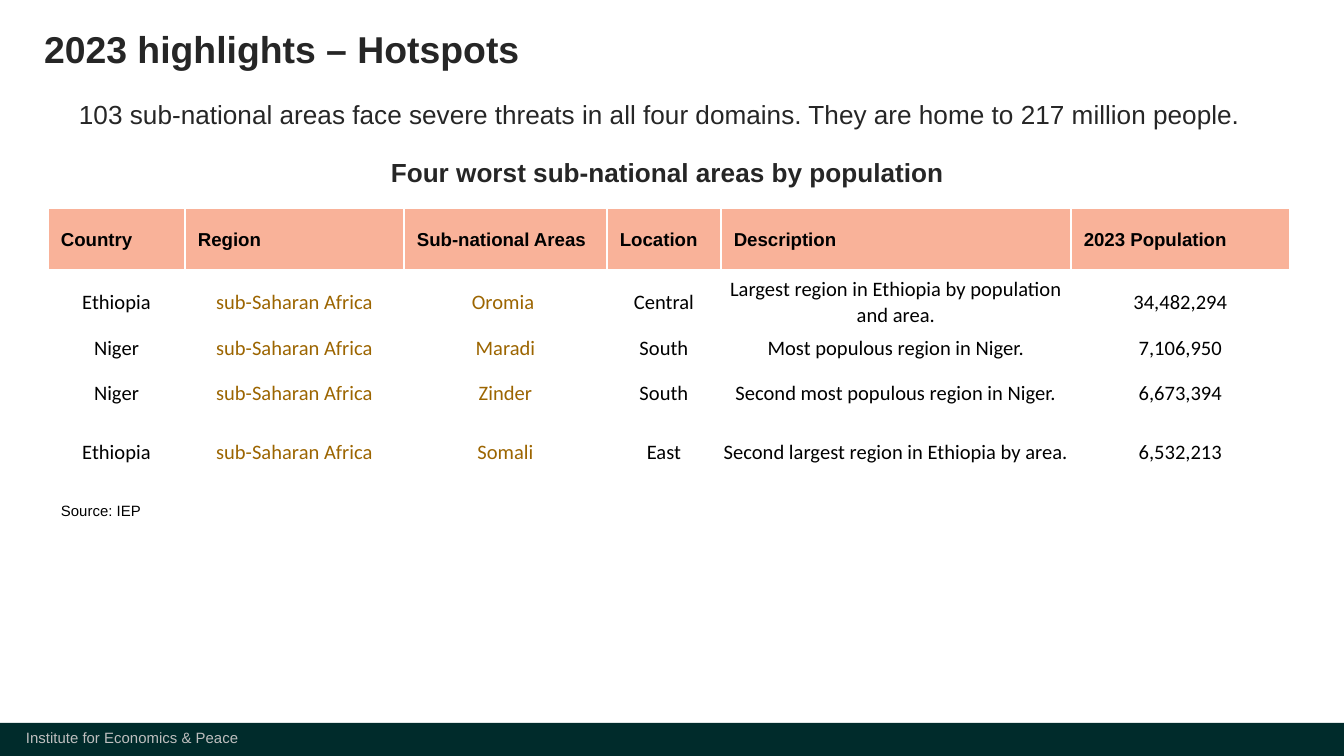
from dataclasses import dataclass

from lxml.etree import SubElement
from pptx import Presentation
from pptx.dml.color import RGBColor
from pptx.enum.shapes import MSO_SHAPE
from pptx.enum.text import MSO_ANCHOR, PP_ALIGN
from pptx.oxml.ns import qn
from pptx.slide import Slide
from pptx.table import _Cell
from pptx.text.text import TextFrame, _Paragraph
from pptx.util import Emu, Pt

EMU_PER_PX = 914400 / 134.4

BLACK = RGBColor(0x00, 0x00, 0x00)
WHITE = RGBColor(0xFF, 0xFF, 0xFF)
CHARCOAL = RGBColor(0x26, 0x26, 0x26)
SILVER = RGBColor(0xBF, 0xBF, 0xBF)
DARK_TEAL = RGBColor(0x00, 0x2B, 0x2B)
SALMON = RGBColor(0xF9, 0xB2, 0x99)
OCHRE = RGBColor(0x9C, 0x65, 0x00)


@dataclass(frozen=True)
class Box:
    left: int
    top: int
    width: int
    height: int


@dataclass(frozen=True)
class TextStyle:
    size: int
    color: RGBColor
    font: str = "Arial"
    bold: bool = False
    align: PP_ALIGN = PP_ALIGN.LEFT


@dataclass(frozen=True)
class Margins:
    left: int
    top: int
    right: int
    bottom: int


@dataclass(frozen=True)
class TextLine:
    text: str
    style: TextStyle
    space_before: int = 0


NO_MARGINS = Margins(0, 0, 0, 0)
BOX_MARGINS = Margins(13, 7, 13, 7)
HEADER_MARGINS = Margins(13, 11, 13, 11)
BODY_MARGINS = Margins(1, 1, 1, 0)
SOURCE_MARGINS = Margins(13, 11, 13, 0)

TITLE = TextStyle(20, CHARCOAL, bold=True)
STATEMENT = TextStyle(14, CHARCOAL)
TABLE_TITLE = TextStyle(14, CHARCOAL, bold=True, align=PP_ALIGN.CENTER)
FOOTER = TextStyle(8, SILVER)
HEADER = TextStyle(10, BLACK, bold=True)
BODY = TextStyle(11, BLACK, "Calibri", align=PP_ALIGN.CENTER)
ACCENT = TextStyle(11, OCHRE, "Calibri", align=PP_ALIGN.CENTER)
SOURCE = TextStyle(8, BLACK)

COLUMN_STYLES = (BODY, ACCENT, ACCENT, BODY, BODY, BODY)
COLUMN_WIDTHS = (137, 219, 203, 114, 350, 219)
ROW_HEIGHTS = (64, 60, 32, 59, 59, 47)
HEADINGS = ("Country", "Region", "Sub-national Areas", "Location", "Description", "2023 Population")
HOTSPOTS = (
    ("Ethiopia", "sub-Saharan Africa", "Oromia ", "Central",
     "Largest region in Ethiopia by population and area.", "34,482,294"),
    ("Niger", "sub-Saharan Africa", "Maradi", "South",
     "Most populous region in Niger.", "7,106,950"),
    ("Niger", "sub-Saharan Africa", "Zinder", "South",
     "Second most populous region in Niger.", "6,673,394"),
    ("Ethiopia", "sub-Saharan Africa", "Somali", "East",
     "Second largest region in Ethiopia by area.", "6,532,213"),
)


def px(length: int) -> Emu:
    return Emu(round(length * EMU_PER_PX))


def place(box: Box) -> tuple[Emu, Emu, Emu, Emu]:
    return px(box.left), px(box.top), px(box.width), px(box.height)


def set_margins(target: TextFrame | _Cell, margins: Margins) -> None:
    target.margin_left = px(margins.left)
    target.margin_top = px(margins.top)
    target.margin_right = px(margins.right)
    target.margin_bottom = px(margins.bottom)


def write(paragraph: _Paragraph, text: str, style: TextStyle) -> None:
    paragraph.text = text
    paragraph.alignment = style.align
    for run in paragraph.runs:
        run.font.size = Pt(style.size)
        run.font.name = style.font
        run.font.bold = style.bold
        run.font.color.rgb = style.color


def add_text(slide: Slide, box: Box, lines: list[TextLine],
             margins: Margins = NO_MARGINS, line_spacing: float = 0.9) -> None:
    text_frame = slide.shapes.add_textbox(*place(box)).text_frame
    text_frame.word_wrap = True
    set_margins(text_frame, margins)
    for index, line in enumerate(lines):
        paragraph = text_frame.add_paragraph() if index else text_frame.paragraphs[0]
        write(paragraph, line.text, line.style)
        paragraph.line_spacing = line_spacing
        if line.space_before:
            paragraph.space_before = Pt(line.space_before)


def add_white_borders(cell: _Cell, bottom_width: int) -> None:
    properties = cell._tc.get_or_add_tcPr()
    widths = {"a:lnL": 1, "a:lnR": 1, "a:lnT": 1, "a:lnB": bottom_width}
    for position, (side, width) in enumerate(widths.items()):
        line = SubElement(properties, qn(side), w=str(Pt(width)))
        fill = SubElement(line, qn("a:solidFill"))
        SubElement(fill, qn("a:srgbClr"), val=str(WHITE))
        properties.insert(position, line)


def fill_cell(cell: _Cell, text: str, style: TextStyle, margins: Margins,
              fill: RGBColor = WHITE, bottom_width: int = 1) -> None:
    cell.fill.solid()
    cell.fill.fore_color.rgb = fill
    cell.vertical_anchor = MSO_ANCHOR.MIDDLE
    set_margins(cell, margins)
    add_white_borders(cell, bottom_width)
    if text:
        write(cell.text_frame.paragraphs[0], text, style)


def add_hotspot_table(slide: Slide) -> None:
    box = Box(48, 208, sum(COLUMN_WIDTHS), sum(ROW_HEIGHTS))
    table = slide.shapes.add_table(len(ROW_HEIGHTS), len(COLUMN_WIDTHS), *place(box)).table
    table.horz_banding = False
    for column, width in zip(table.columns, COLUMN_WIDTHS):
        column.width = px(width)
    for row, height in zip(table.rows, ROW_HEIGHTS):
        row.height = px(height)

    source_row = len(ROW_HEIGHTS) - 1
    for column, (heading, style) in enumerate(zip(HEADINGS, COLUMN_STYLES)):
        fill_cell(table.cell(0, column), heading, HEADER, HEADER_MARGINS, SALMON, 3)
        for row, hotspot in enumerate(HOTSPOTS, start=1):
            fill_cell(table.cell(row, column), hotspot[column], style, BODY_MARGINS)
        if column:
            fill_cell(table.cell(source_row, column), "", SOURCE, BODY_MARGINS)
    fill_cell(table.cell(source_row, 0), "Source: IEP", SOURCE, SOURCE_MARGINS)


def add_footer(slide: Slide) -> None:
    bar = slide.shapes.add_shape(MSO_SHAPE.RECTANGLE, *place(Box(0, 723, 1344, 33)))
    bar.shadow.inherit = False
    bar.fill.solid()
    bar.fill.fore_color.rgb = DARK_TEAL
    bar.line.fill.background()
    add_text(slide, Box(13, 722, 242, 32), [TextLine("Institute for Economics & Peace", FOOTER)],
             BOX_MARGINS, 1.0)


def main() -> None:
    presentation = Presentation()
    presentation.slide_width = px(1344)
    presentation.slide_height = px(756)
    slide = presentation.slides.add_slide(presentation.slide_layouts[6])

    add_footer(slide)
    add_text(slide, Box(44, 31, 707, 40), [TextLine("2023 highlights – Hotspots", TITLE)])
    add_text(slide, Box(79, 102, 1177, 86), [
        TextLine("103 sub-national areas face severe threats in all four domains. "
                 "They are home to 217 million people.", STATEMENT),
        TextLine("Four worst sub-national areas by population", TABLE_TITLE, space_before=16),
    ])
    add_hotspot_table(slide)
    presentation.save("out.pptx")


if __name__ == "__main__":
    main()
